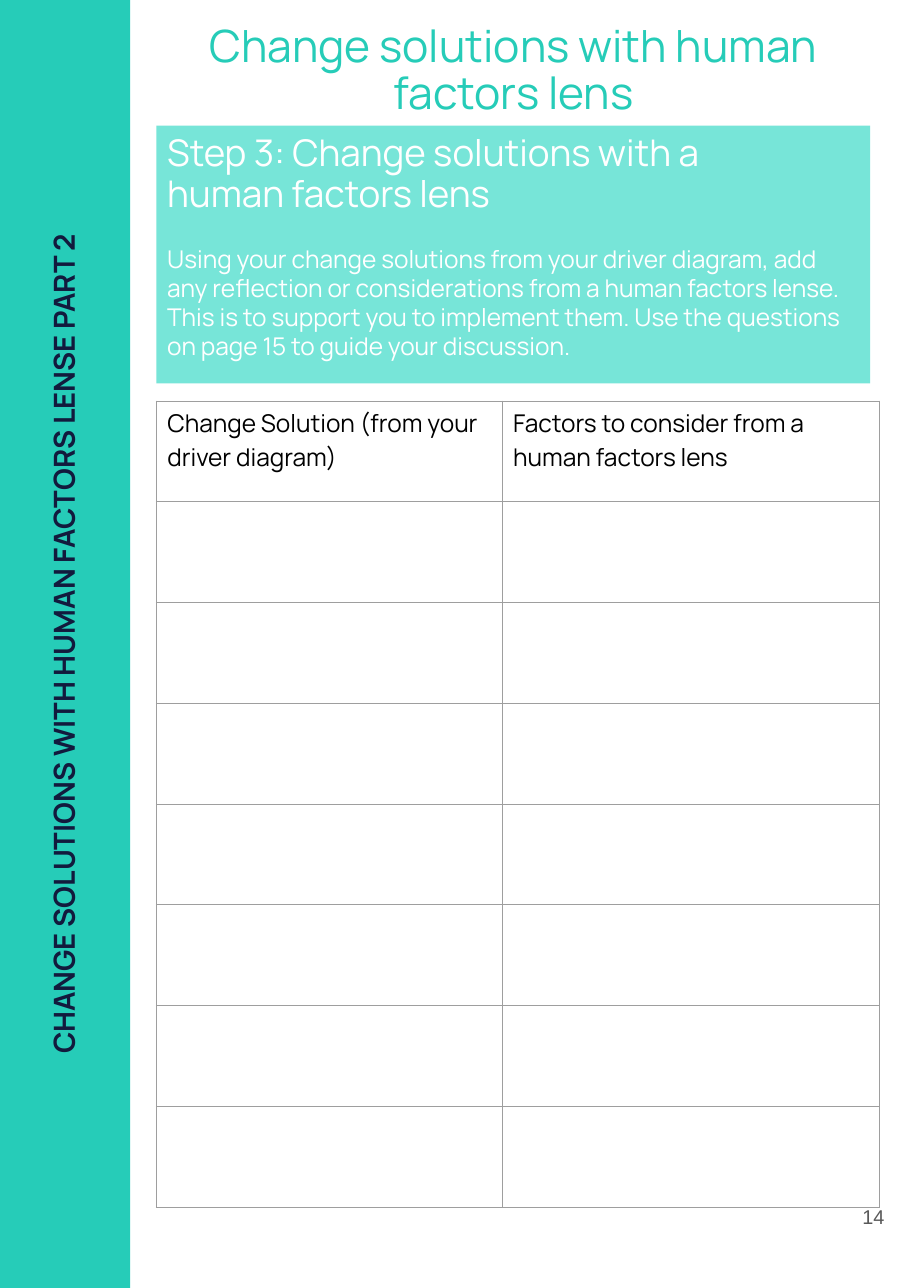
from lxml import etree
from pptx import Presentation
from pptx.dml.color import RGBColor
from pptx.enum import shapes, text
from pptx.oxml import ns
from pptx.util import Pt

TEAL, PALE, NAVY, GREY = "26CCB8", "77E5D8", "121A3D", "9E9E9E"
FONT = "Manrope"
ALIGN = text.PP_ALIGN
ANCHOR = text.MSO_ANCHOR


def tint(target, color):
    """Give a fill a solid colour, or a font its colour."""
    if hasattr(target, "solid"):
        target.solid()
        target = target.fore_color
    else:
        target = target.color
    target.rgb = RGBColor.from_string(color)


def style(para, size, color, align=ALIGN.LEFT, bold=False, font=FONT):
    para.alignment = align
    for run in para.runs:
        run.font.name, run.font.size, run.font.bold = font, Pt(size), bold
        tint(run.font, color)


def frame(shape, inset, anchor=ANCHOR.TOP):
    """Set wrapping, margins (side, top) and anchor; return the text frame."""
    body = shape.text_frame
    body.word_wrap = True
    body.auto_size = text.MSO_AUTO_SIZE.NONE
    body.margin_left = body.margin_right = Pt(inset[0])
    body.margin_top = body.margin_bottom = Pt(inset[1])
    body.vertical_anchor = anchor
    return body


def block(slide, box, color):
    shape = slide.shapes.add_shape(shapes.MSO_SHAPE.RECTANGLE, *map(Pt, box))
    shape.shadow.inherit = False
    tint(shape.fill, color)
    shape.line.fill.background()
    return shape


def sidebar(slide, box, label):
    block(slide, box, TEAL)
    left, top, width, height = box
    span, depth = 762, 37.4
    side = slide.shapes.add_textbox(
        Pt(left + (width - span) / 2 - 1), Pt(top + (height - depth) / 2),
        Pt(span), Pt(depth))
    side.rotation = 270
    body = frame(side, (7.2, 7.2))
    body.text = label
    style(body.paragraphs[0], 19, NAVY, ALIGN.CENTER, True)


def heading(slide, box, words):
    title = slide.shapes.title
    title.left, title.top, title.width, title.height = map(Pt, box)
    body = frame(title, (9.4, 9.4), ANCHOR.MIDDLE)
    body.text = words
    para = body.paragraphs[0]
    para.line_spacing = 0.9
    style(para, 29, TEAL, ALIGN.CENTER)


def step(slide, box, head, guide):
    """Place a panel with a large heading above its guidance."""
    body = frame(block(slide, box, PALE), (7.2, 4.6))
    body.text = "\n".join([*head, guide])
    *tops, last = body.paragraphs
    for para in tops:
        para.line_spacing = Pt(27)
        style(para, 24, "FFFFFF")
    last.space_before = Pt(19)
    last.line_spacing = Pt(19)
    style(last, 16, "FFFFFF")


def outline(cell):
    props = cell._tc.get_or_add_tcPr()
    for edge in ("a:lnL", "a:lnR", "a:lnT", "a:lnB"):
        line = etree.SubElement(props, ns.qn(edge), w=str(Pt(0.75)))
        fill = etree.SubElement(line, ns.qn("a:solidFill"))
        etree.SubElement(fill, ns.qn("a:srgbClr"), val=GREY)


def grid(slide, box, heads, widths, rows):
    table = slide.shapes.add_table(rows, len(heads), *map(Pt, box)).table
    table.first_row = table.horz_banding = False
    for col, width in zip(table.columns, widths):
        col.width = Pt(width)
    for row in table.rows:
        row.height = Pt(box[3] / rows)
    for cell in table.iter_cells():
        outline(cell)
        cell.fill.background()
    for cell, head in zip(table.rows[0].cells, heads):
        cell.text = head
        style(cell.text_frame.paragraphs[0], 16, "000000")


def folio(slide, box, number):
    body = frame(slide.shapes.add_textbox(*map(Pt, box)), (9.4, 9.4),
                 ANCHOR.MIDDLE)
    body.text = number
    style(body.paragraphs[0], 13, "595959", ALIGN.RIGHT, font="Arial")


def main():
    deck = Presentation()
    deck.slide_width, deck.slide_height = Pt(595.44), Pt(841.68)
    slide = deck.slides.add_slide(deck.slide_layouts[5])
    left = 102.2
    folio(slide, (551.5, 763.2, 36, 64.1), "14")
    sidebar(slide, (0, 0, 85, 841.68),
            "CHANGE SOLUTIONS WITH HUMAN FACTORS LENSE PART 2")
    step(slide, (left, 82.1, 466.6, 168.5),
         ["Step 3: Change solutions with a", "human factors lens"],
         "Using your change solutions from your driver diagram, add any "
         "reflection or considerations from a human factors lense. This is "
         "to support you to implement them. Use the questions on page 15 to "
         "guide your discussion.")
    heading(slide, (left, 0, 467.3, 93.6),
            "Change solutions with human factors lens")
    grid(slide, (left, 262.1, 473, 527),
         ["Change Solution (from your driver diagram)",
          "Factors to consider from a human factors lens"],
         (226, 247), 8)
    deck.save("out.pptx")


if __name__ == "__main__":
    main()
